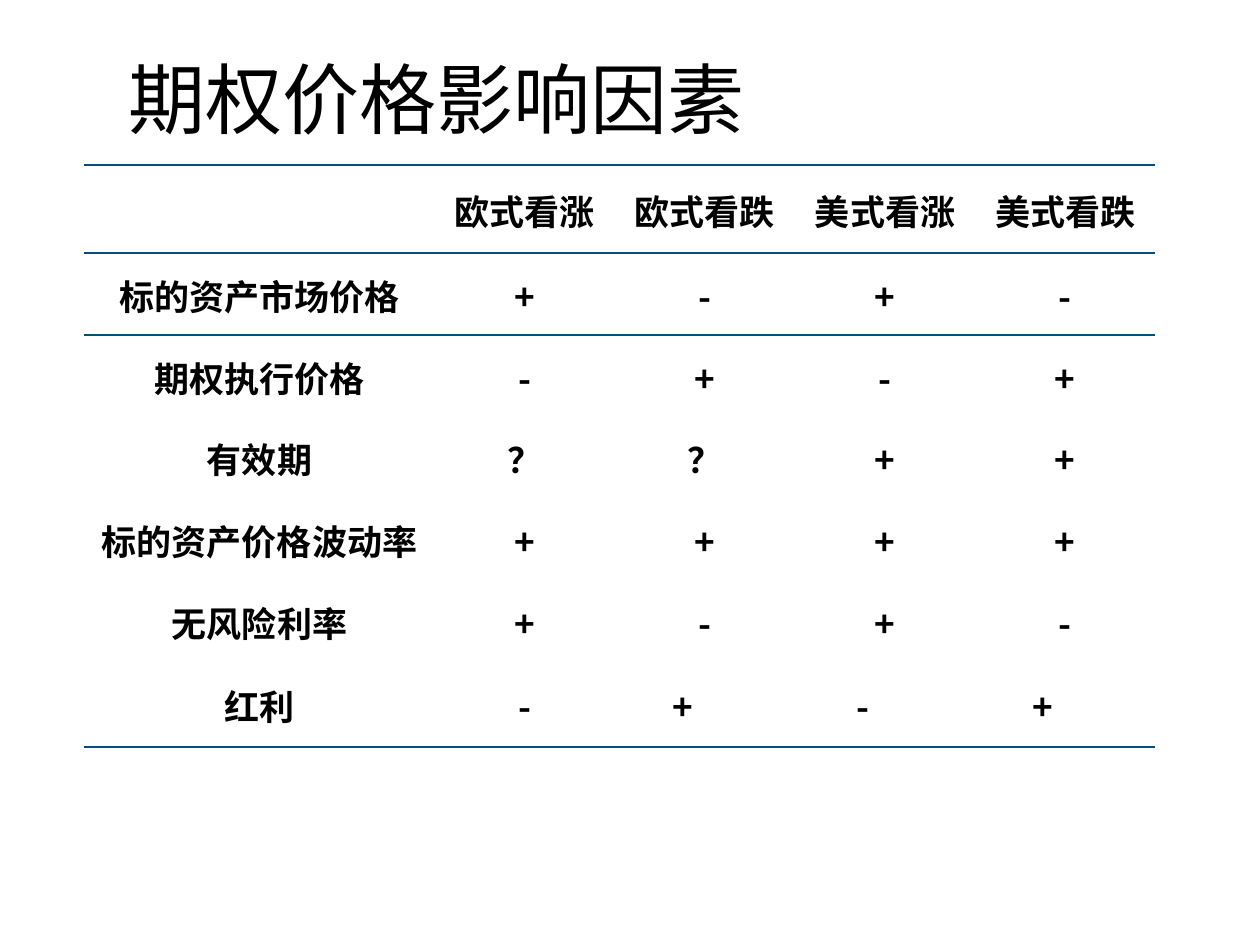
from dataclasses import dataclass

from lxml import etree
from pptx import Presentation
from pptx import util as u
from pptx.dml.color import RGBColor
from pptx.enum import text
from pptx.oxml.ns import qn


@dataclass(frozen=True)
class Theme:
    font: str = "Noto Sans CJK SC"
    ink: str = "000000"
    rule: str = "044E7E"
    title_size: int = 44
    table_size: int = 20
    outer_rule: float = 1.5
    header_rule: float = 1
    plain_style: str = "{2D5ABB26-0587-4C30-8999-92F81FD0307C}"


@dataclass(frozen=True)
class Factor:
    name: str
    signs: str  # one sign per option type
    shifted_from: int = 5  # first column whose sign sits left of centre


THEME = Theme()
SLIDE_WIDTH, SLIDE_HEIGHT = u.Inches(10), u.Inches(7.5)
OPTIONS = ["欧式看涨", "欧式看跌", "美式看涨", "美式看跌"]
FACTORS = [
    Factor("标的资产市场价格", "+-+-"),
    Factor("期权执行价格", "-+-+"),
    Factor("有效期", "？？++"),
    Factor("标的资产价格波动率", "++++"),
    Factor("无风险利率", "+-+-"),
    Factor("红利", "-+-+", shifted_from=2),
]
COLUMN_WIDTHS = [2.78] + [1.43] * len(OPTIONS)
ROW_HEIGHTS = [0.7] + [0.65] * (len(FACTORS) - 1) + [0.67]
CELL_INSET = 0.01
SIGN_SHIFT = 0.35  # extra right inset, about one character wide


def write_text(frame, content: str, *, size: float, bold: bool = False,
               align=text.PP_ALIGN.LEFT) -> None:
    paragraph = frame.paragraphs[0]
    paragraph.alignment = align
    run = paragraph.add_run()
    run.text = content
    font = run.font
    font.name, font.size, font.bold = THEME.font, u.Pt(size), bold
    font.color.rgb = RGBColor.from_string(THEME.ink)
    east_asian = etree.SubElement(run._r.get_or_add_rPr(), qn("a:ea"))
    east_asian.set("typeface", THEME.font)


def add_border(cell, side: str, width: float) -> None:
    """Put a border first in the cell; add the bottom before the top."""
    line = etree.Element(qn(f"a:ln{side}"), w=str(u.Pt(width)))
    fill = etree.SubElement(line, qn("a:solidFill"))
    etree.SubElement(fill, qn("a:srgbClr"), val=THEME.rule)
    cell._tc.get_or_add_tcPr().insert(0, line)


def format_cell(cell, content: str, shift: float = 0) -> None:
    cell.fill.background()
    cell.vertical_anchor = text.MSO_ANCHOR.MIDDLE
    cell.margin_left = cell.margin_top = u.Inches(CELL_INSET)
    cell.margin_right = u.Inches(CELL_INSET + shift)
    cell.margin_bottom = 0
    if content:
        write_text(cell.text_frame, content, size=THEME.table_size, bold=True,
                   align=text.PP_ALIGN.CENTER)


def add_title(slide, content: str) -> None:
    title = slide.shapes.title
    title.left, title.top = u.Inches(0.92), u.Inches(0.3)
    title.width, title.height = u.Inches(9), u.Inches(0.95)
    title.text_frame.vertical_anchor = text.MSO_ANCHOR.MIDDLE
    write_text(title.text_frame, content, size=THEME.title_size)


def add_factor_table(slide) -> None:
    rows = [Factor("", "")] + FACTORS
    frame = slide.shapes.add_table(
        len(rows), len(COLUMN_WIDTHS), u.Inches(0.67), u.Inches(1.31),
        u.Inches(sum(COLUMN_WIDTHS)), u.Inches(sum(ROW_HEIGHTS)))
    table = frame.table
    table.first_row = table.horz_banding = False
    table._tbl.tblPr.find(qn("a:tableStyleId")).text = THEME.plain_style
    for column, width in zip(table.columns, COLUMN_WIDTHS):
        column.width = u.Inches(width)
    for row, height in zip(table.rows, ROW_HEIGHTS):
        row.height = u.Inches(height)

    # Header, then one row per factor
    for row_index, factor in enumerate(rows):
        values = [factor.name, *(factor.signs or OPTIONS)]
        for column_index, value in enumerate(values):
            shifted = column_index >= factor.shifted_from
            format_cell(table.cell(row_index, column_index), value,
                        SIGN_SHIFT if shifted else 0)

    # Rules above and below the header, and under the last row
    last = len(rows) - 1
    for column_index in range(len(COLUMN_WIDTHS)):
        for row_index, side, width in (
                (0, "B", THEME.header_rule), (0, "T", THEME.outer_rule),
                (1, "T", THEME.header_rule), (last, "B", THEME.outer_rule)):
            add_border(table.cell(row_index, column_index), side, width)


def main() -> None:
    presentation = Presentation()
    presentation.slide_width, presentation.slide_height = SLIDE_WIDTH, SLIDE_HEIGHT
    slide = presentation.slides.add_slide(presentation.slide_layouts[5])
    add_title(slide, "期权价格影响因素")
    add_factor_table(slide)
    presentation.save("out.pptx")


if __name__ == "__main__":
    main()
